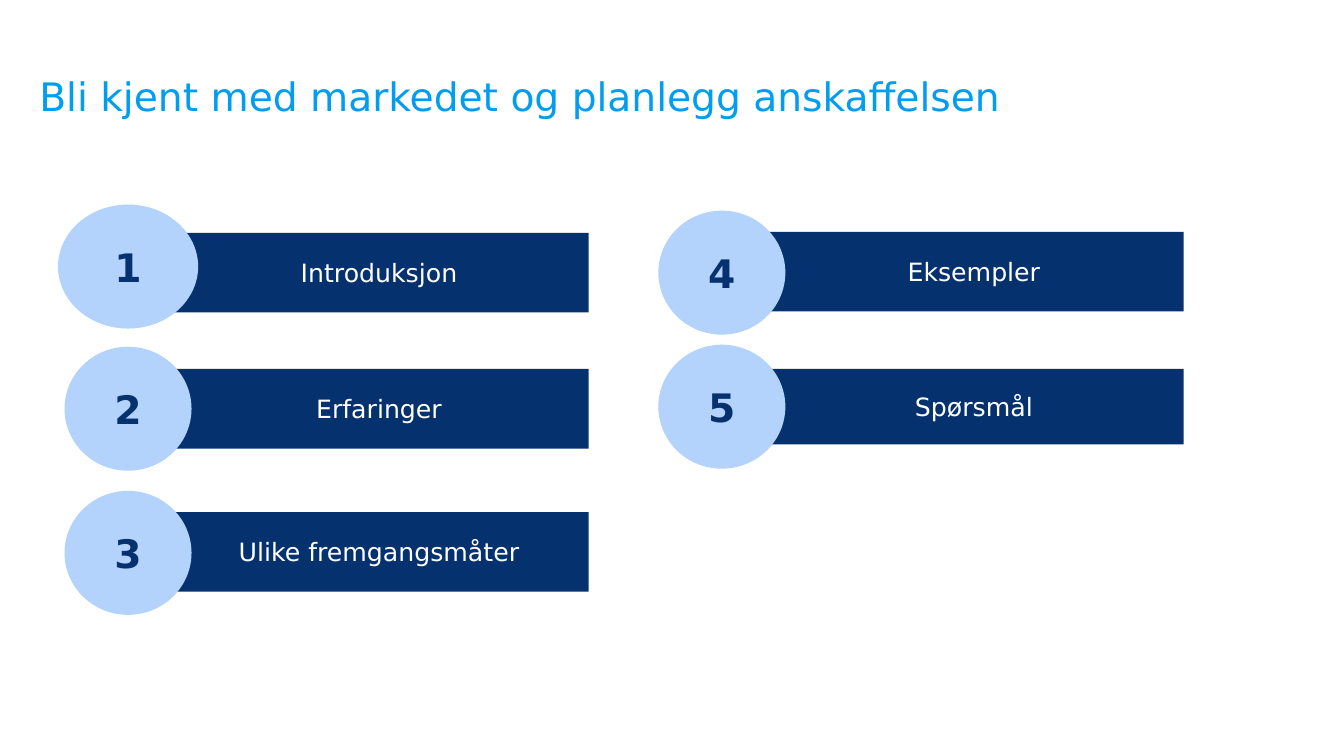
from pptx import Presentation
from pptx.dml.color import RGBColor
from pptx.enum.shapes import MSO_SHAPE
from pptx.enum.text import MSO_ANCHOR, PP_ALIGN
from pptx.util import Inches, Pt

HEADING = "Bli kjent med markedet og planlegg anskaffelsen"
COLUMNS = [
    {"bar_left": 1.68, "circle_center": 1.27, "topics": [
        {"label": "Introduksjon", "bar_top": 2.31, "circle_top": 2.03, "circle_width": 1.39},
        {"label": "Erfaringer", "bar_top": 3.66, "circle_top": 3.44},
        {"label": "Ulike fremgangsmåter", "bar_top": 5.08, "circle_top": 4.87},
    ]},
    {"bar_left": 7.58, "circle_center": 7.16, "topics": [
        {"label": "Eksempler", "bar_top": 2.3, "circle_top": 2.09},
        {"label": "Spørsmål", "bar_top": 3.66, "circle_top": 3.42, "bar_height": 0.75},
    ]},
]
COLORS = {"heading": "009DF0", "navy": "05326E", "light": "B3D2FC", "white": "FFFFFF"}
BAR_WIDTH, BAR_HEIGHT = 4.16, 0.79
CIRCLE_WIDTH, CIRCLE_HEIGHT = 1.26, 1.23
FORMATS = {
    "heading": {"size": Pt(28), "bold": False},
    "label": {"size": Pt(18), "bold": False},
    "number": {"size": Pt(28), "bold": True},
}


def write(shape, text, style, color, align, anchor, margins):
    frame = shape.text_frame
    frame.word_wrap = True
    frame.vertical_anchor = anchor
    for side, margin in zip(("left", "top", "right", "bottom"), margins):
        setattr(frame, f"margin_{side}", Inches(margin))
    paragraph = frame.paragraphs[0]
    paragraph.text = text
    paragraph.alignment = align
    font = paragraph.runs[0].font
    font.name = "DejaVu Sans"
    font.color.rgb = RGBColor.from_string(COLORS[color])
    for name, value in FORMATS[style].items():
        setattr(font, name, value)


def add_block(slide, preset, box, fill, text, style, color):
    block = slide.shapes.add_shape(preset, *map(Inches, box))
    block.shadow.inherit = False
    block.fill.solid()
    block.fill.fore_color.rgb = RGBColor.from_string(COLORS[fill])
    block.line.fill.background()
    write(block, text, style, color, PP_ALIGN.CENTER, MSO_ANCHOR.MIDDLE,
          (0.08, 0.04, 0.08, 0.04))


def main():
    deck = Presentation()
    deck.slide_width, deck.slide_height = Inches(13.33), Inches(7.5)
    slide = deck.slides.add_slide(deck.slide_layouts[5])

    heading = slide.shapes.title
    heading.left, heading.top = Inches(0.39), Inches(0.72)
    heading.width, heading.height = Inches(11.46), Inches(1.02)
    write(heading, HEADING, "heading", "heading", PP_ALIGN.LEFT, MSO_ANCHOR.TOP,
          (0, 0, 0, 0))

    topics = [(column, topic) for column in COLUMNS for topic in column["topics"]]
    for column, topic in topics:
        bar = (column["bar_left"], topic["bar_top"],
               BAR_WIDTH, topic.get("bar_height", BAR_HEIGHT))
        add_block(slide, MSO_SHAPE.RECTANGLE, bar, "navy",
                  topic["label"], "label", "white")
    for number, (column, topic) in enumerate(topics, 1):
        width = topic.get("circle_width", CIRCLE_WIDTH)
        circle = (column["circle_center"] - width / 2, topic["circle_top"],
                  width, CIRCLE_HEIGHT)
        add_block(slide, MSO_SHAPE.OVAL, circle, "light",
                  str(number), "number", "navy")

    deck.save("out.pptx")


if __name__ == "__main__":
    main()
